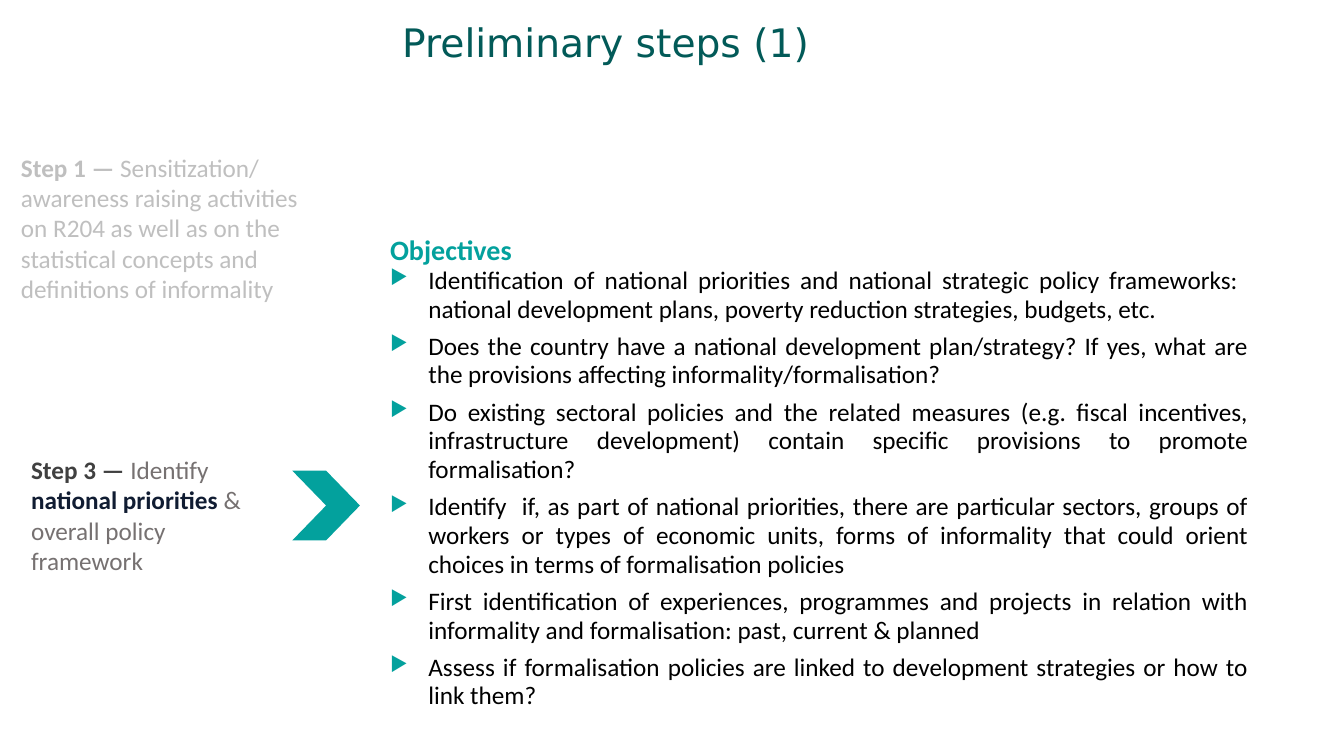
from lxml import etree
from pptx import Presentation
from pptx import util as u
from pptx.dml.color import RGBColor
from pptx.enum import shapes, text
from pptx.oxml.ns import qn

TEAL = "03A19D"
OBJECTIVES = [
    "Identification of national priorities and national strategic policy frameworks:  national development plans, poverty reduction strategies, budgets, etc.",
    "Does the country have a national development plan/strategy? If yes, what are the provisions affecting informality/formalisation?",
    "Do existing sectoral policies and the related measures (e.g. fiscal incentives, infrastructure development) contain specific provisions to promote formalisation?",
    "Identify  if, as part of national priorities, there are particular sectors, groups of workers or types of economic units, forms of informality that could orient choices in terms of formalisation policies ",
    "First identification of experiences, programmes and projects in relation with informality and formalisation: past, current & planned",
    "Assess if formalisation policies are linked to development strategies or how to link them?",
]


def color(value):
    return RGBColor.from_string(value)


class Deck:
    font = "Calibri"
    size = 18

    def __init__(self, slide):
        self.s = slide

    def shape(self, kind, box, fill):
        sp = self.s.shapes.add_shape(kind, *map(u.Inches, box))
        sp.shadow.inherit = False
        sp.fill.solid()
        sp.fill.fore_color.rgb = color(fill)
        sp.line.fill.background()
        return sp

    def textbox(self, box):
        sp = self.s.shapes.add_textbox(*map(u.Inches, box))
        sp.text_frame.word_wrap = True
        return sp.text_frame

    def run(self, p, words, fill, bold=False, size=None, font=None):
        r = p.add_run()
        r.text = words
        r.font.name = font or self.font
        r.font.size = u.Pt(size or self.size)
        r.font.bold = bold
        r.font.color.rgb = color(fill)

    def title(self, box, words):
        tf = self.textbox(box)
        tf.margin_left = tf.margin_right = tf.margin_top = tf.margin_bottom = 0
        p = tf.paragraphs[0]
        p.line_spacing = 1.05
        p.space_after = u.Pt(5)
        p._p.get_or_add_pPr().set("marL", str(u.Inches(0.16)))
        self.run(p, words, "025A58", size=28, font="DejaVu Sans")

    def step(self, box, runs):
        p = self.textbox(box).paragraphs[0]
        for words, fill, bold in runs:
            self.run(p, words, fill, bold)

    def bullet(self, tf, words):
        p = tf.add_paragraph()
        p.alignment = text.PP_ALIGN.JUSTIFY
        p.line_spacing = 0.95
        p.space_after = u.Pt(6)
        pPr = p._p.get_or_add_pPr()
        pPr.set("marL", str(u.Inches(0.38)))
        pPr.set("indent", str(-u.Inches(0.38)))
        clr = etree.SubElement(pPr, qn("a:buClr"))
        etree.SubElement(clr, qn("a:srgbClr"), val=TEAL)
        etree.SubElement(pPr, qn("a:buSzPct"), val="80000")
        etree.SubElement(pPr, qn("a:buChar"), char="▶")
        self.run(p, words, "000000")

    def panel(self, box, heading, items):
        tf = self.shape(shapes.MSO_SHAPE.RECTANGLE, box, "FFFFFF").text_frame
        tf.word_wrap = True
        tf.vertical_anchor = text.MSO_ANCHOR.TOP
        p = tf.paragraphs[0]
        p.alignment = text.PP_ALIGN.LEFT
        self.run(p, heading, TEAL, True, size=20)
        for item in items:
            self.bullet(tf, item)


def main():
    prs = Presentation()
    prs.slide_width = u.Inches(13.33)
    prs.slide_height = u.Inches(7.5)
    deck = Deck(prs.slides.add_slide(prs.slide_layouts[6]))

    deck.title((3.83, 0.16, 8.6, 0.69), "Preliminary steps (1)")
    deck.shape(shapes.MSO_SHAPE.CHEVRON, (2.9, 4.67, 0.67, 0.69), TEAL)
    deck.step((0.11, 1.46, 3.2, 1.62), [
        ("Step 1 — ", "BFBFBF", True),
        ("Sensitization/ awareness raising activities on R204 as well as on the statistical concepts and definitions of informality", "BFBFBF", False),
    ])
    deck.step((0.21, 4.46, 2.69, 1.31), [
        ("Step 3 — ", "404040", True),
        ("Identify ", "767171", False),
        ("national priorities ", "101C32", True),
        ("& overall policy framework", "767171", False),
    ])
    deck.panel((3.77, 2.26, 8.71, 4.89), "Objectives", OBJECTIVES)

    prs.save("out.pptx")


if __name__ == "__main__":
    main()
